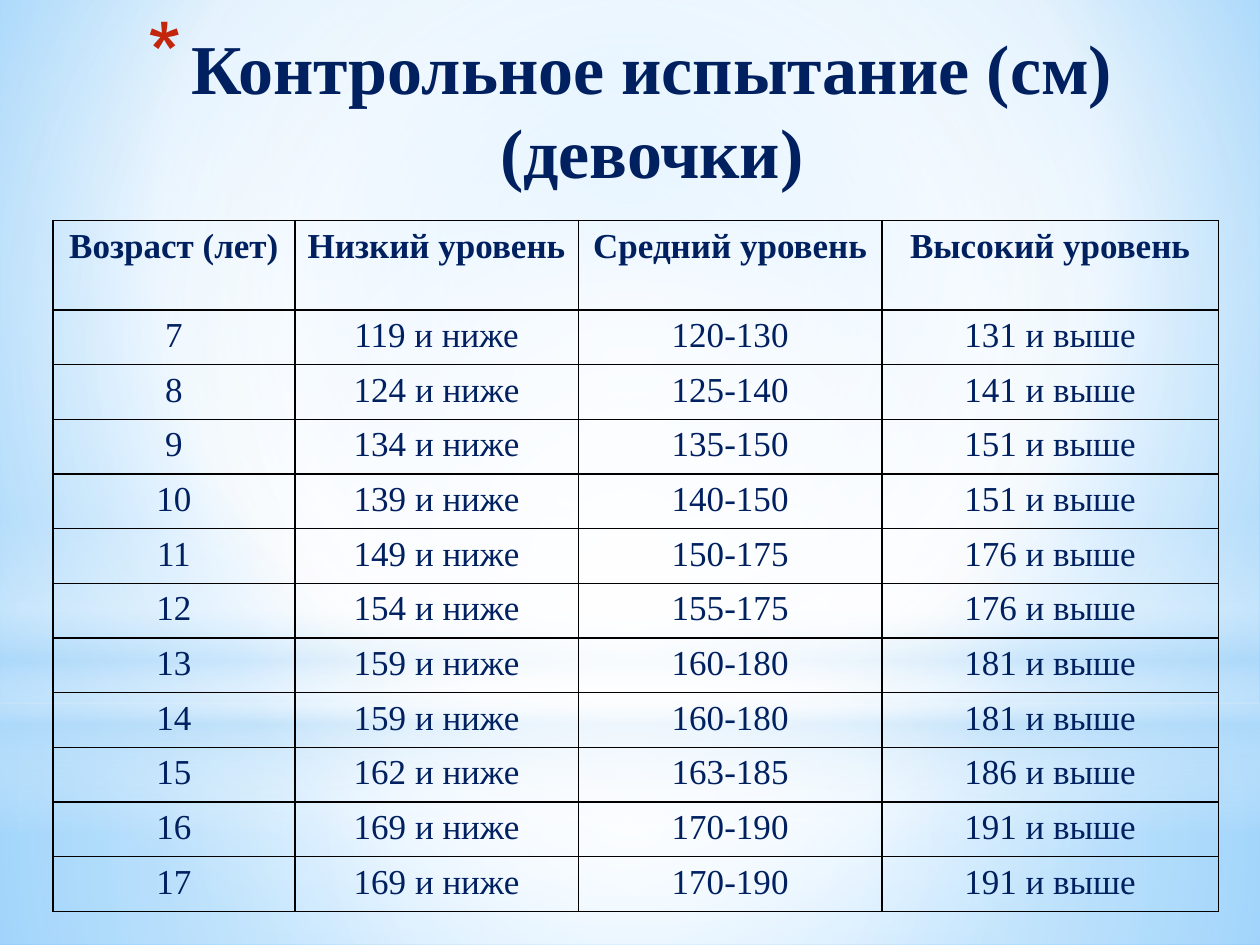
from dataclasses import dataclass
from typing import Optional

from lxml.etree import SubElement
from pptx import Presentation
from pptx.dml.color import RGBColor
from pptx.enum.shapes import MSO_SHAPE
from pptx.enum.text import MSO_ANCHOR, PP_ALIGN
from pptx.oxml import parse_xml
from pptx.oxml.ns import nsdecls, qn
from pptx.util import Inches, Pt

COLORS = {
    "text": "002060", "bullet": "C3260C", "border": "000000", "white": "FFFFFF",
    "haze": "B4DCFA", "sky": "9ED5FF", "deep": "5BB9FF",
}
FONT = {"name": "Times New Roman"}
CENTER = (50, 50, 50, 50)


@dataclass
class Gradient:
    """Stops are (position, colour, opacity) in percent; no focus means a vertical blend."""
    stops: list[tuple[int, str, int]]
    focus: Optional[tuple[int, int, int, int]] = CENTER


@dataclass
class Glow:
    shape: MSO_SHAPE
    top: float
    height: float
    gradient: Gradient


@dataclass
class Norm:
    """Range of the middle level in cm; the other levels start right beside it."""
    age: int
    start: int
    end: int

    def row(self) -> list[str]:
        return [str(self.age), f"{self.start - 1} и ниже",
                f"{self.start}-{self.end}", f"{self.end + 1} и выше"]


BACKGROUND = Gradient([(0, "sky", 100), (60, "white", 100), (100, "deep", 100)],
                      (20, 10, 20, 60))
GLOWS = [
    Glow(MSO_SHAPE.RECTANGLE, 5.58, 1.92,
         Gradient([(0, "white", 91), (37, "white", 76), (100, "haze", 79)])),
    Glow(MSO_SHAPE.RECTANGLE, 0, 5.58,
         Gradient([(0, "white", 89), (48, "white", 62), (100, "haze", 79)])),
    Glow(MSO_SHAPE.RECTANGLE, 4.12, 2.5,
         Gradient([(0, "white", 0), (29, "white", 30), (45, "haze", 40),
                   (55, "white", 26), (65, "haze", 60), (100, "white", 0)], None)),
    Glow(MSO_SHAPE.OVAL, 1.75, 5.58,
         Gradient([(0, "white", 100), (56, "white", 0)])),
]
HEADERS = ["Возраст (лет)", "Низкий уровень", "Средний уровень", "Высокий уровень"]
RANGES = [(120, 130), (125, 140), (135, 150), (140, 150), (150, 175), (155, 175),
          (160, 180), (160, 180), (163, 185), (170, 190), (170, 190)]
NORMS = [Norm(age, *limits) for age, limits in enumerate(RANGES, start=7)]
COLUMNS = [1.92, 2.25, 2.41, 2.67]
TABLE_HEIGHT, HEADER_HEIGHT = 5.48, 0.71


def apply_gradient(owner, fill, gradient: Gradient) -> None:
    """Swap the solid fill inside the owner's XML for a gradient."""
    fill.solid()
    stops = "".join(
        f'<a:gs pos="{pos * 1000}"><a:srgbClr val="{COLORS[color]}">'
        f'<a:alpha val="{opacity * 1000}"/></a:srgbClr></a:gs>'
        for pos, color, opacity in gradient.stops)
    if gradient.focus:
        sides = " ".join(f'{side}="{value * 1000}"'
                         for side, value in zip("ltrb", gradient.focus))
        direction = f'<a:path path="circle"><a:fillToRect {sides}/></a:path>'
    else:
        direction = '<a:lin ang="5400000" scaled="0"/>'
    solid = owner.find(".//" + qn("a:solidFill"))
    solid.getparent().replace(solid, parse_xml(
        f'<a:gradFill {nsdecls("a")} rotWithShape="1"><a:gsLst>{stops}</a:gsLst>'
        f'{direction}</a:gradFill>'))


def add_glow(s, glow: Glow) -> None:
    sp = s.shapes.add_shape(glow.shape, 0, Inches(glow.top), Inches(10), Inches(glow.height))
    sp.shadow.inherit = False
    sp.line.fill.background()
    apply_gradient(sp.element, sp.fill, glow.gradient)


def write_text(tf, text: str, size: int, bold: bool, hang: float):
    """Write one centred paragraph with a hanging indent and return its properties."""
    p = tf.paragraphs[0]
    p.alignment = PP_ALIGN.CENTER
    r = p.add_run()
    r.text = text
    for name, value in {**FONT, "size": Pt(size), "bold": bold}.items():
        setattr(r.font, name, value)
    r.font.color.rgb = RGBColor.from_string(COLORS["text"])
    pPr = p._p.get_or_add_pPr()
    pPr.set("marL", str(Inches(hang)))
    pPr.set("indent", str(-Inches(hang)))
    return pPr


def add_title(s, text: str) -> None:
    sp = s.shapes.add_textbox(Inches(0.5), Inches(0.17), Inches(9), Inches(1.38))
    tf = sp.text_frame
    tf.word_wrap = True
    tf.vertical_anchor = MSO_ANCHOR.MIDDLE
    pPr = write_text(tf, text, 40, True, 0.35)
    color = SubElement(pPr, qn("a:buClr"))
    SubElement(color, qn("a:srgbClr"), val=COLORS["bullet"])
    SubElement(pPr, qn("a:buSzPct"), val="128000")
    SubElement(pPr, qn("a:buChar"), char="*")


def add_borders(cell) -> None:
    tcPr = cell._tc.get_or_add_tcPr()
    for side in "LRTB":
        line = SubElement(tcPr, qn(f"a:ln{side}"), w=str(Pt(1)))
        fill = SubElement(line, qn("a:solidFill"))
        SubElement(fill, qn("a:srgbClr"), val=COLORS["border"])


def add_norms_table(s) -> None:
    rows = [HEADERS] + [norm.row() for norm in NORMS]
    table = s.shapes.add_table(len(rows), len(COLUMNS), Inches(0.42), Inches(1.75),
                               Inches(sum(COLUMNS)), Inches(TABLE_HEIGHT)).table
    table.first_row = table.horz_banding = False
    for column, width in zip(table.columns, COLUMNS):
        column.width = Inches(width)
    norm_height = (TABLE_HEIGHT - HEADER_HEIGHT) / len(NORMS)
    for i, texts in enumerate(rows):
        table.rows[i].height = Inches(norm_height if i else HEADER_HEIGHT)
        for j, text in enumerate(texts):
            cell = table.cell(i, j)
            write_text(cell.text_frame, text, 20, i == 0, 0.38)
            add_borders(cell)
            cell.fill.background()


def main() -> None:
    prs = Presentation()
    prs.slide_width, prs.slide_height = Inches(10), Inches(7.5)
    s = prs.slides.add_slide(prs.slide_layouts[6])
    fill = s.background.fill
    apply_gradient(s.element, fill, BACKGROUND)
    for glow in GLOWS:
        add_glow(s, glow)
    add_title(s, "Контрольное испытание (см) (девочки)")
    add_norms_table(s)
    prs.save("out.pptx")


if __name__ == "__main__":
    main()
